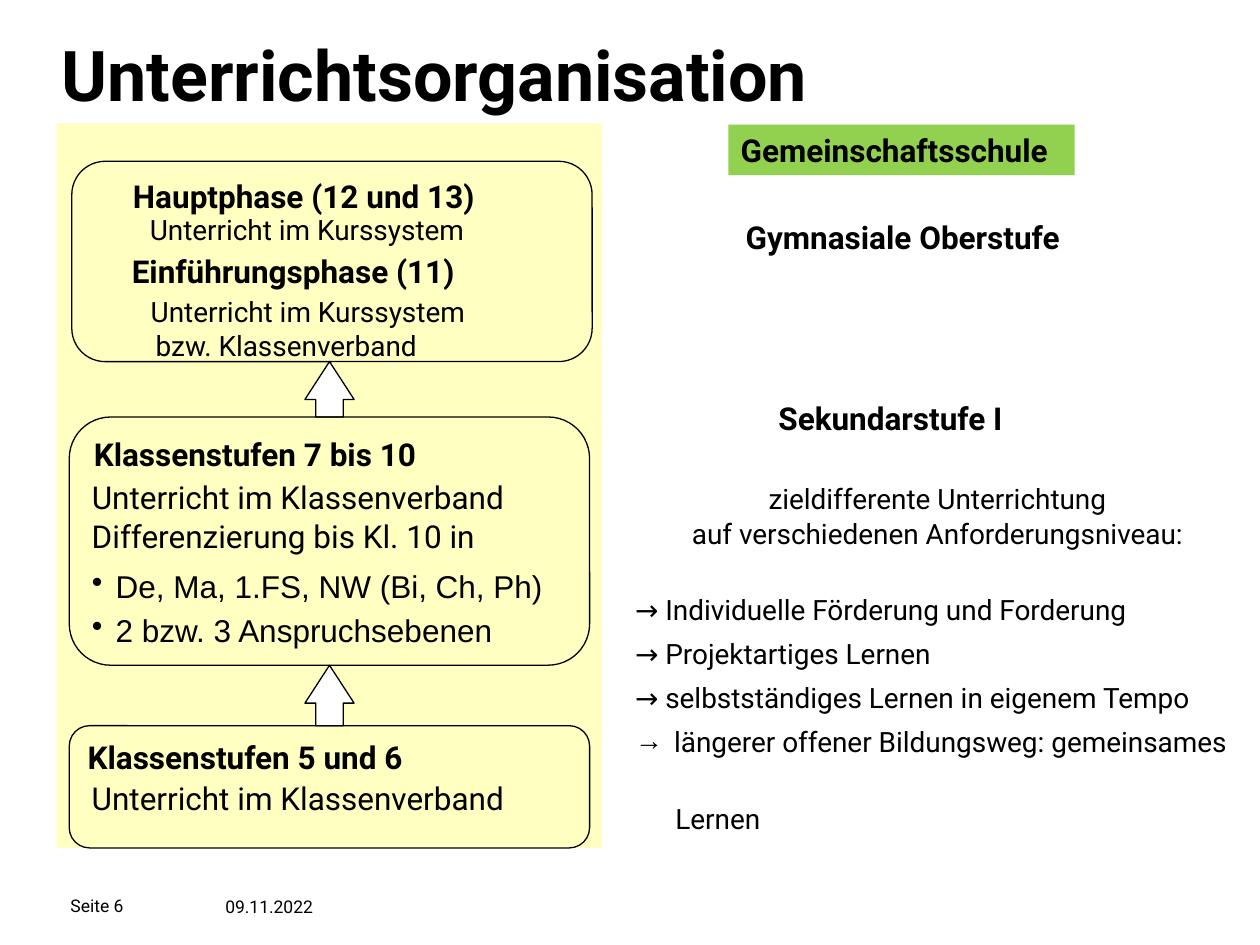
"""Build the slide on how lessons are organised at the Gemeinschaftsschule."""
from dataclasses import dataclass
from typing import Optional

from lxml.etree import SubElement
from pptx import Presentation
from pptx.dml.color import RGBColor
from pptx.enum.shapes import MSO_SHAPE
from pptx.enum.text import MSO_ANCHOR, MSO_AUTO_SIZE, PP_ALIGN
from pptx.oxml.ns import qn
from pptx.shapes.autoshape import Shape
from pptx.slide import Slide
from pptx.text.text import TextFrame
from pptx.util import Inches, Pt

BLACK = RGBColor(0x00, 0x00, 0x00)
WHITE = RGBColor(0xFF, 0xFF, 0xFF)
YELLOW = RGBColor(0xFF, 0xFF, 0x99)
GREEN = RGBColor(0x92, 0xD0, 0x50)


@dataclass(frozen=True)
class Box:
    left: float
    top: float
    width: float
    height: float

    def lengths(self) -> tuple:
        return tuple(Inches(v) for v in (self.left, self.top, self.width, self.height))


@dataclass(frozen=True)
class Line:
    text: str
    size: float = 18
    bold: bool = False
    font: str = "Roboto"
    margin: float = 0
    hanging: float = 0
    before: float = 0
    spacing: float = 1.0
    bullet: str = ""
    align: PP_ALIGN = PP_ALIGN.LEFT


@dataclass(frozen=True)
class Stage:
    box: Box
    lines: tuple


@dataclass(frozen=True)
class Label:
    box: Box
    lines: tuple


def write(frame: TextFrame, lines: tuple, wrap: bool = False) -> None:
    frame.word_wrap = wrap
    for index, line in enumerate(lines):
        paragraph = frame.add_paragraph() if index else frame.paragraphs[0]
        properties = paragraph._p.get_or_add_pPr()
        properties.set("marL", str(Inches(line.margin)))
        properties.set("indent", str(Inches(-line.hanging)))
        if line.bullet:
            SubElement(properties, qn("a:buChar")).set("char", line.bullet)
        else:
            SubElement(properties, qn("a:buNone"))
        paragraph.alignment = line.align
        paragraph.line_spacing = line.spacing
        paragraph.space_before = Pt(line.before)
        run = paragraph.add_run()
        run.text = line.text
        run.font.name = line.font
        run.font.size = Pt(line.size)
        run.font.bold = line.bold
        run.font.color.rgb = BLACK


def draw(slide: Slide, kind: MSO_SHAPE, box: Box, fill: Optional[RGBColor] = None,
         outlined: bool = False) -> Shape:
    shape = slide.shapes.add_shape(kind, *box.lengths())
    shape.shadow.inherit = False
    if fill is None:
        shape.fill.background()
    else:
        shape.fill.solid()
        shape.fill.fore_color.rgb = fill
    if outlined:
        shape.line.color.rgb = BLACK
        shape.line.width = Pt(0.75)
    else:
        shape.line.fill.background()
    return shape


def draw_panel(slide: Slide, box: Box) -> None:
    panel = draw(slide, MSO_SHAPE.RECTANGLE, box, YELLOW)
    color = panel.fill._xPr.find(qn("a:solidFill"))[0]
    SubElement(color, qn("a:alpha")).set("val", "60000")


def draw_arrow(slide: Slide, box: Box) -> None:
    arrow = draw(slide, MSO_SHAPE.UP_ARROW, box, WHITE, outlined=True)
    arrow.adjustments[0] = 0.56
    arrow.adjustments[1] = 0.77


def draw_stage(slide: Slide, stage: Stage) -> None:
    card = draw(slide, MSO_SHAPE.ROUNDED_RECTANGLE, stage.box, outlined=True)
    card.text_frame.vertical_anchor = MSO_ANCHOR.TOP
    write(card.text_frame, stage.lines)


def draw_label(slide: Slide, label: Label) -> None:
    frame = slide.shapes.add_textbox(*label.box.lengths()).text_frame
    write(frame, label.lines)
    frame.auto_size = MSO_AUTO_SIZE.SHAPE_TO_FIT_TEXT


def fill_placeholder(placeholder: Shape, box: Box, lines: tuple, wrap: bool) -> None:
    placeholder.left, placeholder.top, placeholder.width, placeholder.height = box.lengths()
    placeholder.text_frame.auto_size = MSO_AUTO_SIZE.NONE
    placeholder.text_frame.vertical_anchor = MSO_ANCHOR.TOP
    write(placeholder.text_frame, lines, wrap)


STAGES = (
    Stage(Box(0.57, 1.28, 4.13, 1.59), (
        Line("Hauptphase (12 und 13)", bold=True, margin=0.31),
        Line("Einführungsphase (11)", bold=True, margin=0.3, before=21),
        Line("Unterricht im Kurssystem", 16, margin=0.45, before=3),
        Line("bzw. Klassenverband", 16, margin=0.49),
    )),
    Stage(Box(0.55, 3.31, 4.13, 1.97), (Line("Klassenstufen 7 bis 10", bold=True),)),
    Stage(Box(0.55, 5.76, 4.13, 0.97), (Line("Klassenstufen 5 und 6", bold=True),)),
)

SUBJECTS = {"font": "Arial", "margin": 0.19, "hanging": 0.19, "bullet": "•"}
LABELS = (
    Label(Box(1.09, 1.67, 2.75, 0.34), (Line("Unterricht im Kurssystem", 16, spacing=0.9),)),
    Label(Box(0.63, 3.78, 3.65, 0.37), (Line("Unterricht im Klassenverband", spacing=0.9),)),
    Label(Box(0.63, 4.09, 3.4, 0.37), (Line("Differenzierung bis Kl. 10 in", spacing=0.9),)),
    Label(Box(0.63, 4.45, 3.78, 0.4), (Line("De, Ma, 1.FS, NW (Bi, Ch, Ph)", **SUBJECTS),)),
    Label(Box(0.63, 4.8, 3.41, 0.4), (Line("2 bzw. 3 Anspruchsebenen", **SUBJECTS),)),
    Label(Box(0.63, 6.17, 3.74, 0.37), (Line("Unterricht im Klassenverband", spacing=0.9),)),
    Label(Box(5.82, 1.67, 2.87, 0.4), (Line("Gymnasiale Oberstufe", bold=True, spacing=1.05),)),
    Label(Box(6.08, 3.1, 2.14, 0.4), (Line("Sekundarstufe I", bold=True, spacing=1.05),)),
    Label(Box(5.35, 3.76, 4.18, 0.67), tuple(
        Line(text, 16, spacing=1.05, align=PP_ALIGN.CENTER)
        for text in ("zieldifferente Unterrichtung", "auf verschiedenen Anforderungsniveau:")
    )),
    Label(Box(1.69, 7.06, 0.94, 0.27), (Line("09.11.2022", 10),)),
)

PRINCIPLES = (
    Line("→ Individuelle Förderung und Forderung", 16),
    Line("→ Projektartiges Lernen", 16, before=6),
    Line("→ selbstständiges Lernen in eigenem Tempo", 16, before=6),
    Line("längerer offener Bildungsweg: gemeinsames", 16, margin=0.31, hanging=0.31,
         before=6, bullet="→"),
    Line("Lernen", 16, margin=0.32, before=25),
)


def main() -> None:
    presentation = Presentation()
    presentation.slide_width, presentation.slide_height = Inches(10), Inches(7.5)
    slide = presentation.slides.add_slide(presentation.slide_layouts[1])

    fill_placeholder(slide.shapes.title, Box(0.39, 0.2, 6.44, 0.78),
                     (Line("Unterrichtsorganisation", 40, bold=True),), wrap=False)
    fill_placeholder(slide.placeholders[1], Box(4.94, 4.65, 5, 1.78), PRINCIPLES, wrap=True)

    draw_panel(slide, Box(0.45, 0.98, 4.33, 5.75))
    for upper, lower in zip(STAGES, STAGES[1:]):
        top = upper.box.top + upper.box.height
        draw_arrow(slide, Box(2.42, top, 0.39, lower.box.top - top))
    for stage in STAGES:
        draw_stage(slide, stage)

    school = draw(slide, MSO_SHAPE.RECTANGLE, Box(5.78, 0.99, 2.75, 0.4), GREEN)
    school.text_frame.vertical_anchor = MSO_ANCHOR.TOP
    write(school.text_frame, (Line("Gemeinschaftsschule", bold=True),))
    for label in LABELS:
        draw_label(slide, label)

    page = slide.shapes.add_textbox(*Box(0.56, 7.07, 1.26, 0.24).lengths()).text_frame
    page.margin_left = page.margin_top = page.margin_right = page.margin_bottom = 0
    page.vertical_anchor = MSO_ANCHOR.MIDDLE
    write(page, (Line("Seite 6", 10),))
    presentation.save("out.pptx")


if __name__ == "__main__":
    main()
